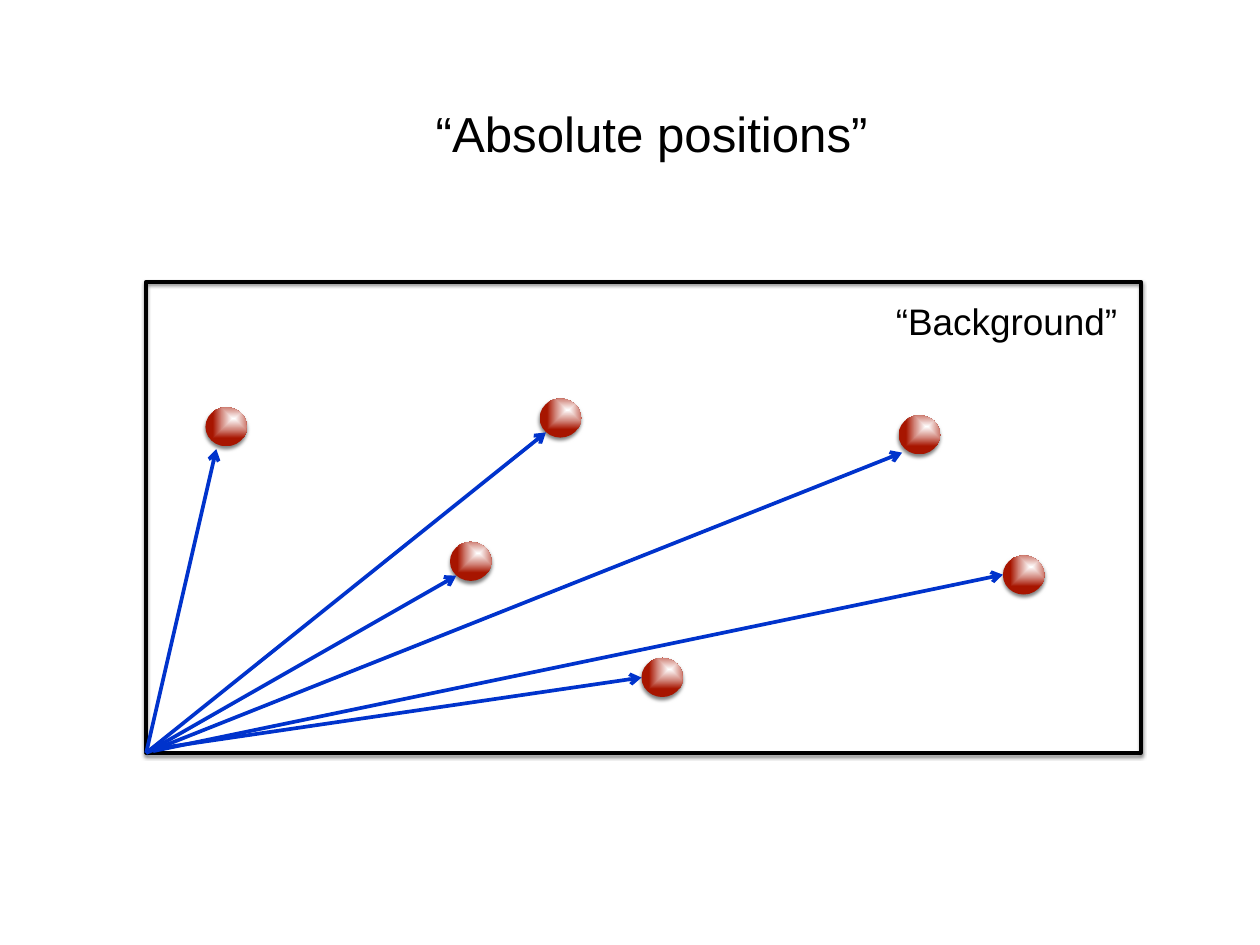
from pptx import Presentation
from pptx.dml.color import RGBColor
from pptx.enum.shapes import MSO_CONNECTOR, MSO_SHAPE
from pptx.enum.text import MSO_ANCHOR, MSO_AUTO_SIZE, PP_ALIGN
from pptx.oxml import parse_xml
from pptx.oxml.ns import nsdecls, qn
from pptx.util import Cm, Pt

TITLE = "“Absolute positions”"
LABEL = "“Background”"
FONT, BLACK, BLUE = "Arial", "000000", "0033CC"
FRAME = (4.19, 8.08, 28.52, 13.51)
ORIGIN = (4.19, 21.59)
BALL_SIZE = (1.19, 1.12)
BALL_STOPS = [(0, "FFFFFF"), (54, "D38A80"), (100, "A71500")]
# ball left/top, arrow start, arrow tip (cm)
POSITIONS = [
    ((5.89, 11.68), ORIGIN, (6.2, 12.88)),
    ((15.47, 11.43), ORIGIN, (15.65, 12.4)),
    ((25.76, 11.91), ORIGIN, (25.86, 12.98)),
    ((12.9, 15.54), ORIGIN, (13.08, 16.51)),
    ((18.39, 18.87), (4.34, 21.49), (18.39, 19.43)),
    ((28.75, 15.93), (4.39, 21.54), (28.75, 16.48)),
]


def cms(*values):
    return [Cm(v) for v in values]


def color(hex_value):
    return RGBColor.from_string(hex_value)


def format_text(sp, text, size, align, anchor, insets):
    tf = sp.text_frame
    tf.text = text
    tf.vertical_anchor = anchor
    tf.margin_left = tf.margin_right = Cm(insets[0])
    tf.margin_top = tf.margin_bottom = Cm(insets[1])
    p = tf.paragraphs[0]
    p.alignment = align
    font = p.runs[0].font
    font.name, font.size = FONT, Pt(size)
    font.color.rgb = color(BLACK)
    return tf


def add_shadow(sp):
    sp.shadow.inherit = False
    effects = sp._element.spPr.find(qn("a:effectLst"))
    effects.append(parse_xml(
        f'<a:outerShdw {nsdecls("a")} blurRad="{Pt(3)}" dist="{Pt(2)}" dir="5400000" '
        f'rotWithShape="0"><a:srgbClr val="{BLACK}"><a:alpha val="50000"/></a:srgbClr>'
        '</a:outerShdw>'))


def add_ball(shapes, corner):
    sp = shapes.add_shape(MSO_SHAPE.OVAL, *cms(*corner, *BALL_SIZE))
    sp.line.fill.background()
    sp.fill.background()
    stops = "".join(f'<a:gs pos="{pos * 1000}"><a:srgbClr val="{c}"/></a:gs>'
                    for pos, c in BALL_STOPS)
    spPr = sp._element.spPr
    spPr.replace(spPr.find(qn("a:noFill")), parse_xml(
        f'<a:gradFill {nsdecls("a")} rotWithShape="1"><a:gsLst>{stops}</a:gsLst>'
        '<a:path path="shape"><a:fillToRect l="68000" t="29000" r="32000" b="71000"/>'
        '</a:path></a:gradFill>'))
    add_shadow(sp)


def add_arrow(shapes, start, tip):
    line = shapes.add_connector(MSO_CONNECTOR.STRAIGHT, *cms(*start, *tip))
    line.line.color.rgb = color(BLUE)
    line.line.width = Pt(3)
    line.line._get_or_add_ln().append(
        parse_xml(f'<a:tailEnd {nsdecls("a")} type="arrow"/>'))
    line._element.spPr.append(parse_xml(f'<a:effectLst {nsdecls("a")}/>'))


def main():
    prs = Presentation()
    prs.slide_width, prs.slide_height = cms(36.12, 27.1)
    slide = prs.slides.add_slide(prs.slide_layouts[5])
    shapes = slide.shapes

    title = shapes.title
    title.left, title.top, title.width, title.height = cms(12.04, 2.77, 13.28, 2.08)
    tf = format_text(title, TITLE, 40, PP_ALIGN.CENTER, MSO_ANCHOR.TOP, (0.36, 0.18))
    tf.word_wrap = False
    tf.auto_size = MSO_AUTO_SIZE.SHAPE_TO_FIT_TEXT

    frame = shapes.add_shape(MSO_SHAPE.RECTANGLE, *cms(*FRAME))
    frame.fill.background()
    frame.line.color.rgb = color(BLACK)
    frame.line.width = Pt(3)
    add_shadow(frame)

    label = shapes.add_textbox(*cms(25.53, 8.41, 7.42, 1.57))
    tf = format_text(label, LABEL, 30, PP_ALIGN.LEFT, MSO_ANCHOR.MIDDLE, (0.15, 0.15))
    tf.word_wrap = True
    tf.auto_size = MSO_AUTO_SIZE.SHAPE_TO_FIT_TEXT

    for corner, start, tip in POSITIONS:
        add_ball(shapes, corner)
        add_arrow(shapes, start, tip)

    prs.save("out.pptx")


if __name__ == "__main__":
    main()
